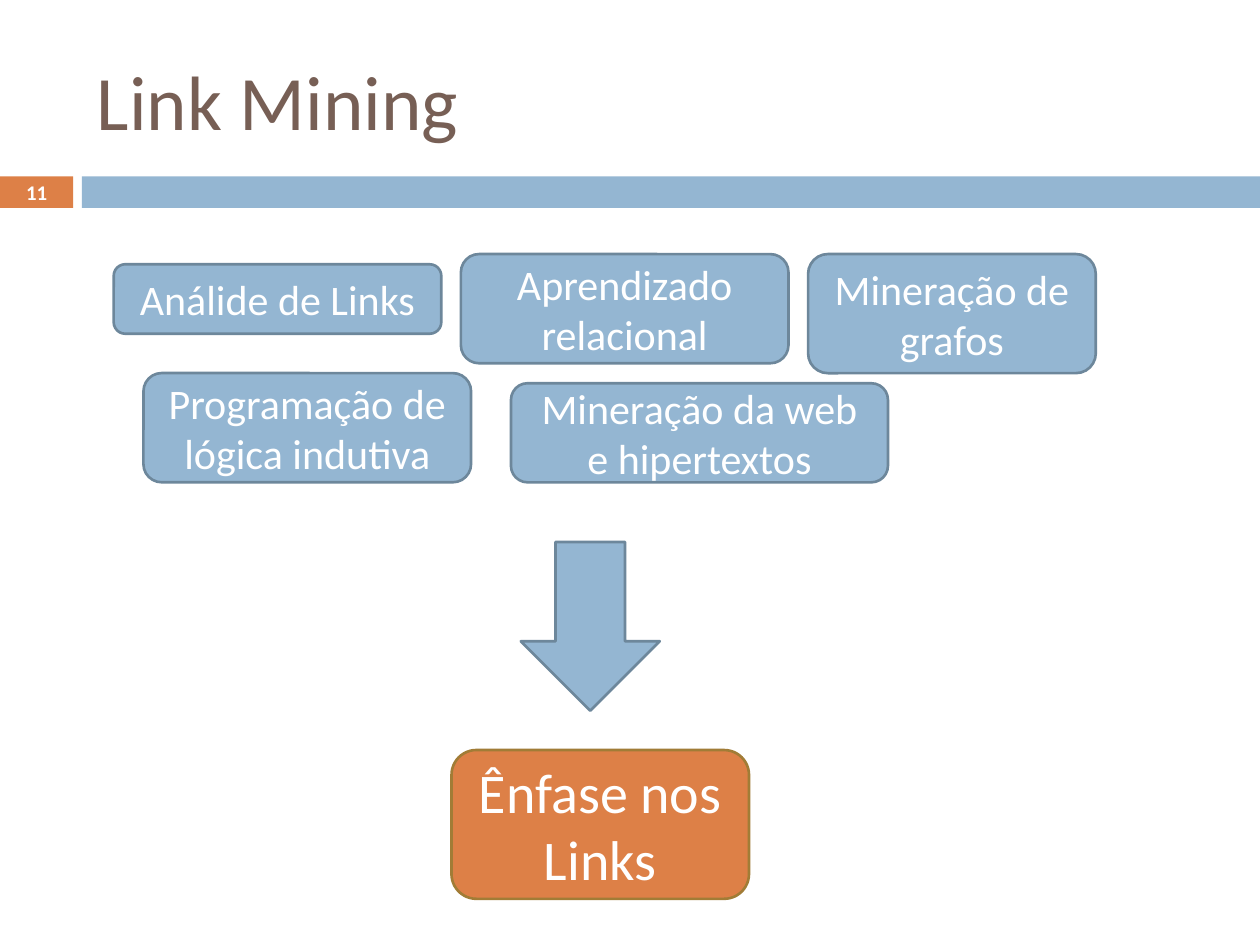
from dataclasses import dataclass
from typing import Optional

from pptx import Presentation
from pptx.dml.color import RGBColor
from pptx.enum.shapes import MSO_SHAPE as Preset
from pptx.enum.text import MSO_ANCHOR as Anchor, PP_ALIGN as Align
from pptx.util import Pt

COLORS = {
    "blue": "94B6D2",
    "blue_edge": "6D879B",
    "orange": "DD8047",
    "orange_edge": "A17C36",
    "title": "775F55",
    "white": "FFFFFF",
}
FONT = "Calibri"
BAND_TOP, BAND_HEIGHT = 100.8, 18
NUMBER_WIDTH, BAND_LEFT = 41.8, 46.8
SLIDE_WIDTH, SLIDE_HEIGHT = 720, 540


@dataclass
class Block:
    left: float
    top: float
    width: float
    height: float
    text: str = ""
    fill: str = "blue"
    edge: Optional[str] = "blue_edge"
    size: float = 24
    preset: Preset = Preset.ROUNDED_RECTANGLE


BLOCKS = [
    Block(0, BAND_TOP, NUMBER_WIDTH, BAND_HEIGHT, fill="orange", edge=None,
          preset=Preset.RECTANGLE),
    Block(BAND_LEFT, BAND_TOP, SLIDE_WIDTH - BAND_LEFT, BAND_HEIGHT, edge=None,
          preset=Preset.RECTANGLE),
    Block(65, 151, 187.2, 39.7, "Análide de Links"),
    Block(461.8, 145.2, 164.4, 68.1, "Mineração de grafos"),
    Block(82, 213.2, 187.2, 62.4, "Programação de lógica indutiva"),
    Block(263.4, 145.2, 187.2, 62.4, "Aprendizado relacional"),
    Block(292, 219, 215.4, 56.6, "Mineração da web e hipertextos"),
    Block(258, 428.6, 170, 85, "Ênfase nos Links", "orange", "orange_edge", 32),
    Block(297.6, 309.7, 79.4, 96.4, preset=Preset.DOWN_ARROW),
]


def rgb(name: str) -> RGBColor:
    return RGBColor.from_string(COLORS[name])


def write(frame, text: str, size: float, color: str, align: Align,
          bold: bool = False) -> None:
    frame.word_wrap = True
    frame.vertical_anchor = Anchor.MIDDLE
    paragraph = frame.paragraphs[0]
    paragraph.alignment = align
    run = paragraph.add_run()
    run.text = text
    run.font.name = FONT
    run.font.size = Pt(size)
    run.font.bold = bold
    run.font.color.rgb = rgb(color)


def draw_block(slide, block: Block) -> None:
    shape = slide.shapes.add_shape(block.preset, Pt(block.left), Pt(block.top),
                                   Pt(block.width), Pt(block.height))
    shape.shadow.inherit = False
    shape.fill.solid()
    shape.fill.fore_color.rgb = rgb(block.fill)
    if block.edge:
        shape.line.color.rgb = rgb(block.edge)
        shape.line.width = Pt(1.5)
    else:
        shape.line.fill.background()
    if block.text:
        write(shape.text_frame, block.text, block.size, "white", Align.CENTER)


def draw_title(slide, text: str) -> None:
    title = slide.shapes.title
    title.left, title.top = Pt(48.2), Pt(18)
    title.width, title.height = Pt(642.2), Pt(77.8)
    write(title.text_frame, text, 44, "title", Align.LEFT)


def draw_page_number(slide, number: str) -> None:
    box = slide.shapes.add_textbox(0, Pt(BAND_TOP - 0.7), Pt(NUMBER_WIDTH),
                                   Pt(BAND_HEIGHT + 1.4))
    frame = box.text_frame
    frame.margin_left = frame.margin_right = 0
    frame.margin_top = frame.margin_bottom = 0
    write(frame, number, 11.9, "white", Align.CENTER, bold=True)


def main() -> None:
    deck = Presentation()
    deck.slide_width, deck.slide_height = Pt(SLIDE_WIDTH), Pt(SLIDE_HEIGHT)
    slide = deck.slides.add_slide(deck.slide_layouts.get_by_name("Title Only"))
    draw_title(slide, "Link Mining")
    for block in BLOCKS:
        draw_block(slide, block)
    draw_page_number(slide, "11")
    deck.save("out.pptx")


if __name__ == "__main__":
    main()
